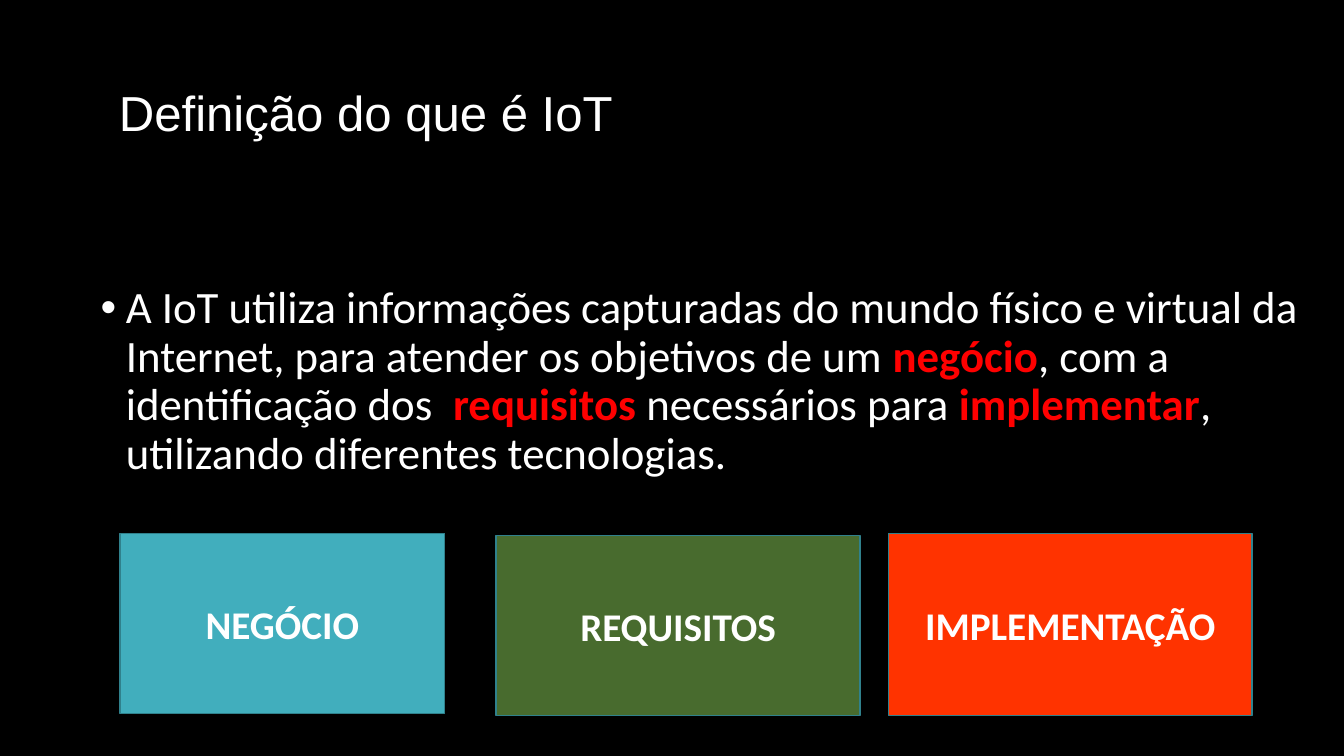
from pptx import Presentation
from pptx.dml.color import RGBColor
from pptx.enum.shapes import MSO_SHAPE
from pptx.enum.text import MSO_ANCHOR, PP_ALIGN
from pptx.oxml import parse_xml
from pptx.oxml.ns import nsdecls
from pptx.util import Inches, Pt

BLACK = RGBColor(0, 0, 0)
WHITE = RGBColor(255, 255, 255)
RED = RGBColor(255, 0, 0)
TEAL = RGBColor(0x41, 0xAE, 0xBD)
GREEN = RGBColor(0x48, 0x6B, 0x2E)
ORANGE = RGBColor(0xFF, 0x33, 0x00)
EDGE = RGBColor(0x30, 0x81, 0x8C)


def place(shape, *box):
    """Set left, top, width and height in inches."""
    for name, size in zip(("left", "top", "width", "height"), box):
        setattr(shape, name, Inches(size))


def style(font, color, **form):
    """Set the font colour and each given format value."""
    for name, value in form.items():
        setattr(font, name, value)
    font.color.rgb = color


deck = Presentation()
deck.slide_width, deck.slide_height = Inches(13.33), Inches(7.5)
slide = deck.slides.add_slide(deck.slide_layouts[5])
slide.background.fill.solid()
slide.background.fill.fore_color.rgb = BLACK

# Title
title = slide.shapes.title
place(title, 1.08, 0.57, 11.5, 1.16)
title.text_frame.text = "Definição do que é IoT"
title.text_frame.vertical_anchor = MSO_ANCHOR.MIDDLE
head = title.text_frame.paragraphs[0]
head.alignment = PP_ALIGN.LEFT
head.line_spacing = 0.9
style(head.runs[0].font, WHITE, name="Arial", size=Pt(35.1))

# Definition, with every second part a key word
body = slide.shapes.add_textbox(0, 0, 0, 0)
place(body, 0.9, 2.78, 12.1, 2.35)
body.text_frame.word_wrap = True
para = body.text_frame.paragraphs[0]
para.line_spacing = 0.9
props = para._p.get_or_add_pPr()
props.set("marL", str(Inches(0.25)))
props.set("indent", str(-Inches(0.25)))
for tag in ('buFont %s typeface="Arial"', 'buChar %s char="•"'):
    props.append(parse_xml("<a:" + tag % nsdecls("a") + "/>"))

parts = (
    "A IoT utiliza informações capturadas do mundo físico e virtual da "
    "Internet, para atender os objetivos de um ",
    "negócio",
    ", com a identificação dos  ",
    "requisitos",
    " necessários para ",
    "implementar",
    ", utilizando diferentes tecnologias.",
)
for i, text in enumerate(parts):
    key = i % 2 == 1
    run = para.add_run()
    run.text = text
    style(run.font, RED if key else WHITE, name="Calibri", size=Pt(32), bold=key)

# Three steps
steps = (
    ("NEGÓCIO", TEAL, (1.19, 5.29, 3.22, 1.79)),
    ("REQUISITOS", GREEN, (4.92, 5.31, 3.61, 1.79)),
    ("IMPLEMENTAÇÃO", ORANGE, (8.81, 5.29, 3.61, 1.81)),
)
for text, color, box in steps:
    step = slide.shapes.add_shape(MSO_SHAPE.RECTANGLE, 0, 0, 0, 0)
    place(step, *box)
    step.shadow.inherit = False
    step.fill.solid()
    step.fill.fore_color.rgb = color
    step.line.color.rgb = EDGE
    step.line.width = Pt(1)
    step.text_frame.text = text
    step.text_frame.word_wrap = True
    step.text_frame.vertical_anchor = MSO_ANCHOR.MIDDLE
    label = step.text_frame.paragraphs[0]
    label.alignment = PP_ALIGN.CENTER
    style(label.runs[0].font, WHITE, name="Calibri", size=Pt(28), bold=True)

deck.save("out.pptx")
